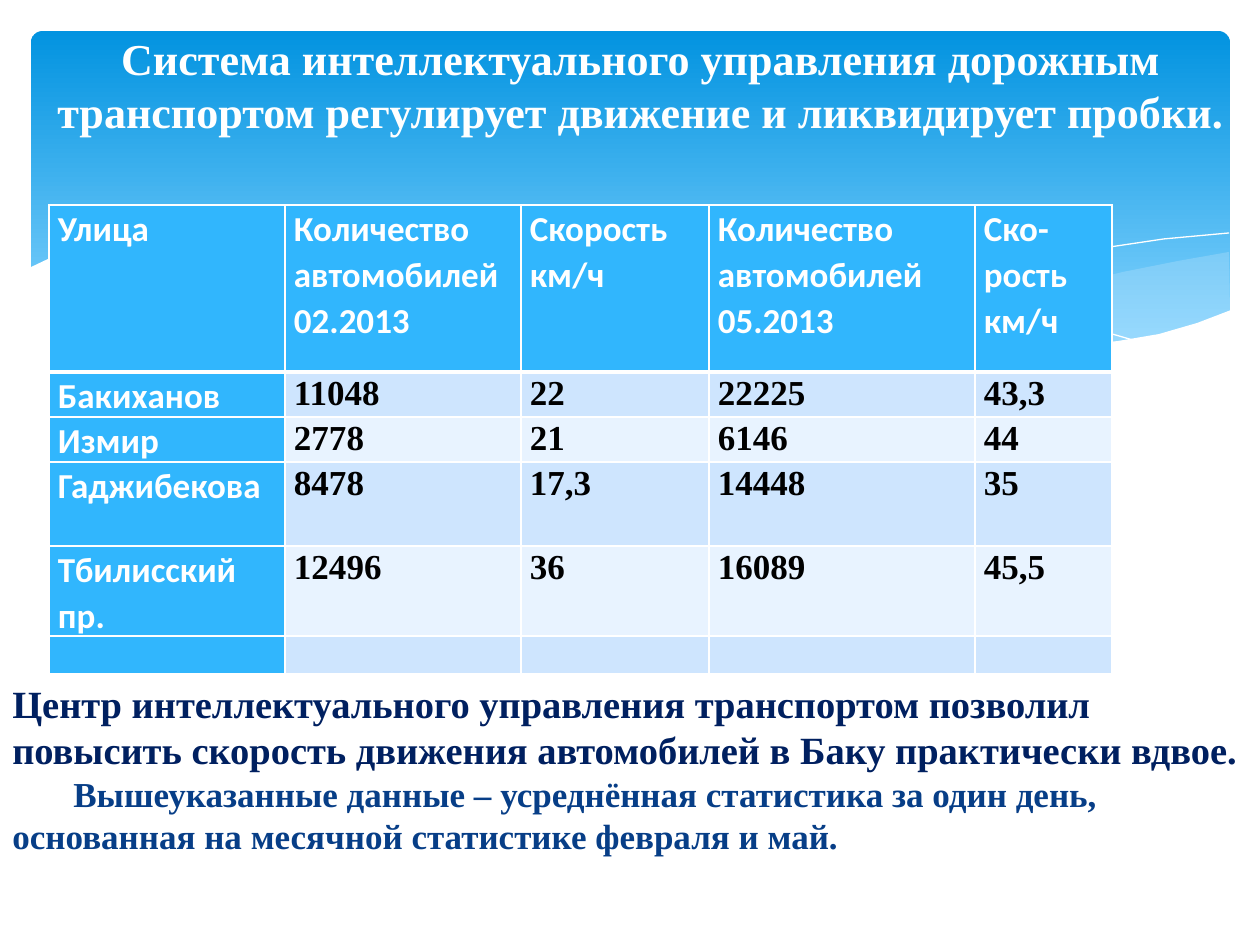
from lxml.etree import SubElement
from pptx import Presentation
from pptx.dml.color import RGBColor
from pptx.enum.shapes import MSO_SHAPE
from pptx.enum.text import MSO_ANCHOR, PP_ALIGN
from pptx.oxml.ns import qn
from pptx.util import Emu, Pt

PX = 914400 / 126

WHITE = RGBColor(0xFF, 0xFF, 0xFF)
BLACK = RGBColor(0, 0, 0)
SKY_DARK = RGBColor(0x02, 0x93, 0xE0)
SKY_LIGHT = RGBColor(0x83, 0xD3, 0xFE)
WAVE = RGBColor(0xC6, 0xE7, 0xFC)
ACCENT = RGBColor(0x31, 0xB6, 0xFD)
BAND_DARK = RGBColor(0xCE, 0xE5, 0xFE)
BAND_LIGHT = RGBColor(0xE8, 0xF3, 0xFF)
NAVY = RGBColor(0x00, 0x20, 0x60)
BLUE = RGBColor(0x07, 0x3E, 0x87)

SERIF = "Times New Roman"
TITLE = ("Система интеллектуального управления дорожным транспортом "
         "регулирует движение и ликвидирует пробки.")
TITLE_FONT = dict(name=SERIF, size=Pt(25.2), bold=True, color=WHITE)
HEAD_FONT = dict(name="Calibri", size=Pt(20), bold=True, color=WHITE)
DATA_FONT = dict(name=SERIF, size=Pt(20), bold=True, color=BLACK)

# text, font, first-line indent in px
NOTES = [
    ("Центр интеллектуального управления транспортом позволил повысить "
     "скорость движения автомобилей в Баку практически вдвое.",
     dict(name=SERIF, size=Pt(22), bold=True, color=NAVY), 0),
    ("Вышеуказанные данные – усреднённая статистика за один день, "
     "основанная на месячной статистике февраля и май.",
     dict(name=SERIF, size=Pt(20), bold=True, color=BLUE), 61),
]

ROWS = [
    ["Улица", "Количество\nавтомобилей\n02.2013", "Скорость\nкм/ч",
     "Количество\nавтомобилей 05.2013", "Ско-рость\nкм/ч"],
    ["Бакиханов", "11048", "22", "22225", "43,3"],
    ["Измир", "2778", "21", "6146", "44"],
    ["Гаджибекова", "8478", "17,3", "14448", "35"],
    ["Тбилисский пр.", "12496", "36", "16089", "45,5"],
    [""] * 5,
]
COL_WIDTHS = [236, 236, 188, 266, 137]
ROW_HEIGHTS = [167, 42, 42, 84, 84, 36]

RIGHT_WAVE = [
    (1229, 252), (1178, 261), (1123, 272), (1048, 290), (949, 312), (833, 334),
    (888, 341), (954, 348), (1012, 350), (1076, 348), (1130, 340), (1178, 330),
    (1230, 311)]
MIDDLE_WAVE = [
    (1125, 344), (1055, 334), (976, 320), (890, 302), (793, 280), (717, 262),
    (648, 249), (586, 241), (529, 236), (455, 233), (413, 236), (360, 241),
    (431, 251), (509, 266), (566, 280), (668, 302), (757, 321), (838, 335),
    (910, 345), (974, 349), (1031, 350), (1080, 349)]
FALLING_LINE = [
    (389, 246), (433, 239), (488, 236), (546, 236), (616, 239), (701, 248),
    (766, 257), (838, 268), (916, 285), (1002, 304), (1095, 329), (1143, 343)]
RISING_LINE = [
    (772, 324), (847, 304), (907, 289), (978, 272), (1053, 257), (1110, 247),
    (1164, 239), (1229, 233)]
WHITE_WAVE = [
    (1231, 310), (1197, 323), (1159, 334), (1118, 341), (1071, 346), (1019, 349),
    (959, 347), (892, 340), (816, 330), (730, 315), (634, 294), (563, 277),
    (493, 261), (428, 248), (368, 239), (315, 234), (266, 232), (203, 232),
    (150, 236), (107, 243), (74, 251), (50, 258), (29, 268), (29, 415), (1231, 415)]

# points, fill colour (None for an open white line), opacity in percent
CURVES = [
    (RIGHT_WAVE, WAVE, 29),
    (MIDDLE_WAVE, WAVE, 40),
    (FALLING_LINE, None, 100),
    (RISING_LINE, None, 100),
    (WHITE_WAVE, WHITE, 100),
]


def px(*values):
    return [Emu(round(v * PX)) for v in values]


def write(p, text, font):
    r = p.add_run()
    r.text = text
    for key, value in font.items():
        if key == "color":
            r.font.color.rgb = value
        else:
            setattr(r.font, key, value)


def add_sky(s):
    sp = s.shapes.add_shape(MSO_SHAPE.ROUNDED_RECTANGLE, *px(31, 31, 1199, 340))
    sp.adjustments[0] = 0.034
    sp.shadow.inherit = False
    sp.line.fill.background()
    sp.fill.gradient()
    sp.fill.gradient_angle = 270
    stops = [(0, SKY_DARK), (0.9, SKY_LIGHT)]
    for stop, (position, color) in zip(sp.fill.gradient_stops, stops):
        stop.position = position
        stop.color.rgb = color


def add_curve(s, points, color, opacity):
    builder = s.shapes.build_freeform(*points[0], scale=PX)
    builder.add_line_segments(points[1:], close=color is not None)
    sp = builder.convert_to_shape()
    sp.shadow.inherit = False
    if color is None:
        sp.fill.background()
        sp.line.color.rgb = WHITE
        sp.line.width = Pt(0)
        return
    sp.line.fill.background()
    sp.fill.solid()
    sp.fill.fore_color.rgb = color
    if opacity < 100:
        clr = sp.element.spPr.find(".//" + qn("a:srgbClr"))
        SubElement(clr, qn("a:alpha"), val=str(opacity * 1000))


def set_borders(cell, widths):
    """Draw white borders; widths maps a side (L, R, T, B) to points."""
    tcPr = cell._tc.get_or_add_tcPr()
    for side, width in widths.items():
        ln = SubElement(tcPr, qn("a:ln" + side), w=str(Pt(width)))
        fill = SubElement(ln, qn("a:solidFill"))
        SubElement(fill, qn("a:srgbClr"), val=str(WHITE))


def add_traffic_table(s):
    table = s.shapes.add_table(
        len(ROWS), len(COL_WIDTHS),
        *px(49, 205, sum(COL_WIDTHS), sum(ROW_HEIGHTS))).table
    for col, width in zip(table.columns, px(*COL_WIDTHS)):
        col.width = width
    for row, height in zip(table.rows, px(*ROW_HEIGHTS)):
        row.height = height
    for i, texts in enumerate(ROWS):
        for j, text in enumerate(texts):
            cell = table.cell(i, j)
            is_head = i == 0 or j == 0
            set_borders(cell, dict(L=1, R=1, T=3 if i == 1 else 1, B=3 if i == 0 else 1))
            cell.fill.solid()
            cell.fill.fore_color.rgb = (
                ACCENT if is_head else BAND_DARK if i % 2 else BAND_LIGHT)
            cell.margin_left, cell.margin_right = px(9, 9)
            cell.margin_top = cell.margin_bottom = 0
            if not text:
                continue
            tf = cell.text_frame
            for k, line in enumerate(text.split("\n")):
                p = tf.add_paragraph() if k else tf.paragraphs[0]
                p.line_spacing = 1.07
                write(p, line, HEAD_FONT if is_head else DATA_FONT)


def add_notes(s):
    tf = s.shapes.add_textbox(*px(0, 674, 1260, 190)).text_frame
    tf.word_wrap = True
    for k, (text, font, indent) in enumerate(NOTES):
        p = tf.add_paragraph() if k else tf.paragraphs[0]
        p._p.get_or_add_pPr().set("indent", str(px(indent)[0]))
        write(p, text, font)


def place_title(s):
    title = s.shapes.title
    title.element.getparent().append(title.element)
    title.left, title.top, title.width, title.height = px(35, 31, 1211, 137)
    tf = title.text_frame
    tf.word_wrap = True
    tf.vertical_anchor = MSO_ANCHOR.TOP
    tf.margin_top = tf.margin_bottom = 0
    p = tf.paragraphs[0]
    p.alignment = PP_ALIGN.CENTER
    write(p, TITLE, TITLE_FONT)


def main():
    prs = Presentation()
    prs.slide_width, prs.slide_height = px(1260, 945)
    s = prs.slides.add_slide(prs.slide_layouts[5])
    add_sky(s)
    for curve in CURVES:
        add_curve(s, *curve)
    place_title(s)
    add_notes(s)
    add_traffic_table(s)
    prs.save("out.pptx")


if __name__ == "__main__":
    main()
